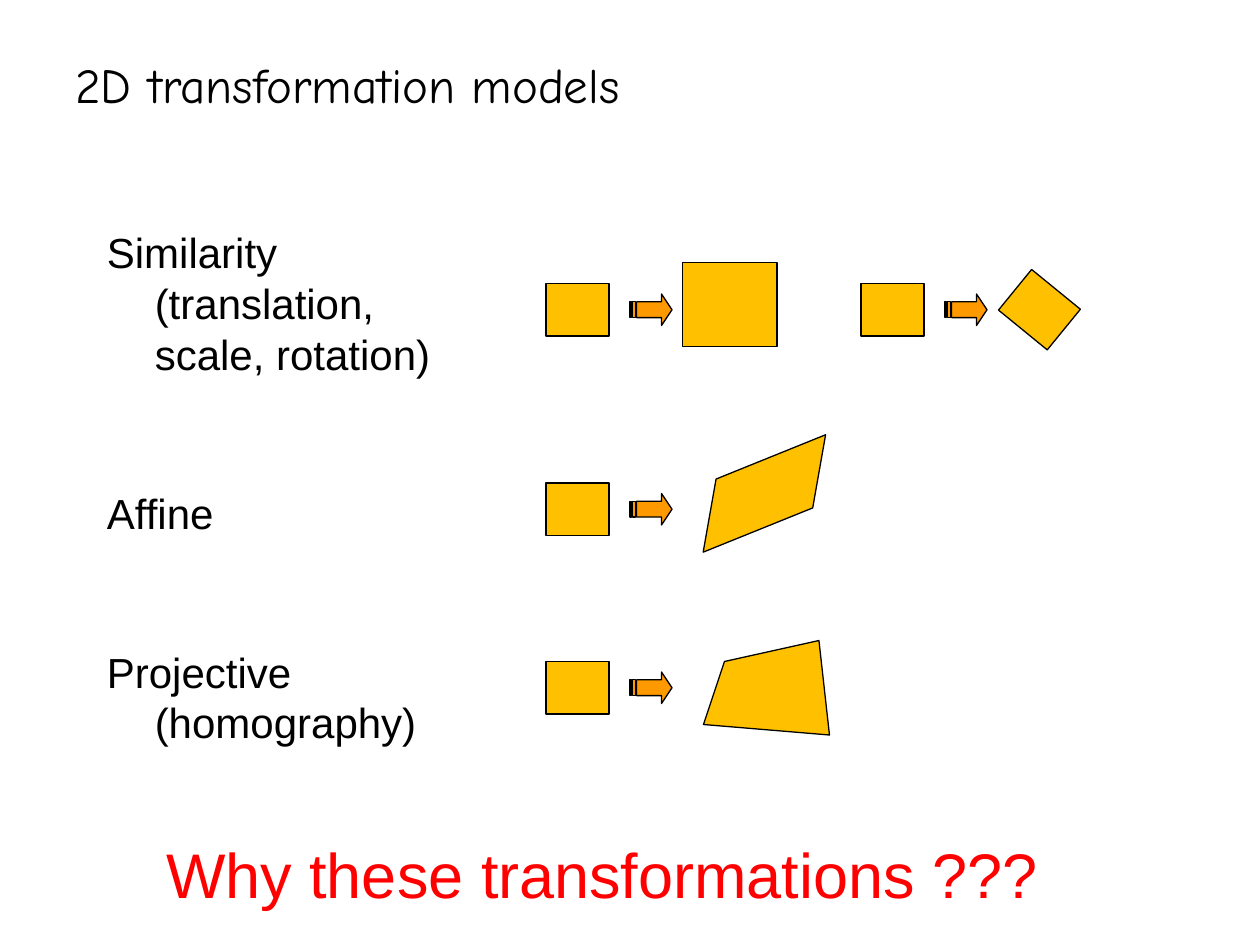
"""Build a slide that compares similarity, affine and projective transformations."""
import pptx
import pptx.dml.color
import pptx.enum.shapes
import pptx.enum.text
import pptx.util

presentation = pptx.Presentation()
presentation.slide_width = pptx.util.Inches(10)
presentation.slide_height = pptx.util.Inches(7.5)
slide = presentation.slides.add_slide(presentation.slide_layouts[6])
shapes = slide.shapes
kinds = pptx.enum.shapes.MSO_SHAPE
cell = presentation.slide_width // 120


def color(value):
    return pptx.dml.color.RGBColor.from_string(value)


def paint(shape, fill):
    shape.shadow.inherit = False
    shape.fill.solid()
    shape.fill.fore_color.rgb = color(fill)
    shape.line.color.rgb = color("000000")
    shape.line.width = pptx.util.Pt(0.75)


texts = [
    ((6, 2, 108, 12), ["2D transformation models"], "Comic Neue", 28, "000000"),
    ((9, 21, 105, 69), ["Similarity\v(translation,\vscale, rotation)", "Affine",
                        "Projective\v(homography)"], "Arial", 24, "000000"),
    ((14.64, 79, 86.3, 8.5), ["Why these transformations ???"], "Arial", 36, "FF0000"),
]
frames = []
for box, lines, font, size, ink in texts:
    frame = shapes.add_textbox(*(int(cell * number) for number in box)).text_frame
    frame.word_wrap = True
    frame.text = "\n".join(lines)
    for paragraph in frame.paragraphs:
        paragraph.font.name = font
        paragraph.font.size = pptx.util.Pt(size)
        paragraph.font.color.rgb = color(ink)
    frames.append(frame)

title, models, question = frames
title.vertical_anchor = pptx.enum.text.MSO_ANCHOR.MIDDLE
question.word_wrap = False
question.auto_size = pptx.enum.text.MSO_AUTO_SIZE.SHAPE_TO_FIT_TEXT
indent = pptx.util.Inches(0.38)
for number, paragraph in enumerate(models.paragraphs):
    paragraph.line_spacing = pptx.util.Pt(28.9)
    paragraph.space_before = pptx.util.Pt(62 if number else 0)
    properties = paragraph._p.get_or_add_pPr()
    properties.set("marL", str(indent))
    properties.set("indent", str(-indent))

arrow_head = [(24, 0), (24, 4), (5, 4), (5, 12), (24, 12), (24, 16), (32, 8)]
arrow_stripes = [[(left, 4), (left, 12), (right, 12), (right, 4)]
                 for left, right in ((2, 4), (0, 1))]
for column, row in ((52, 27), (82, 27), (52, 46), (52, 63)):
    square = shapes.add_shape(kinds.RECTANGLE, column * cell, row * cell, 6 * cell, 5 * cell)
    paint(square, "FFC000")
    builder = shapes.build_freeform(*arrow_head[0], scale=(cell / 8, cell * 3 / 16))
    builder.add_line_segments(arrow_head[1:])
    for stripe in arrow_stripes:
        builder.move_to(*stripe[0])
        builder.add_line_segments(stripe[1:])
    arrow = builder.convert_to_shape((column + 8) * cell, (row + 1) * cell)
    paint(arrow, "FF9900")

results = [
    (kinds.RECTANGLE, (65, 25, 9, 8), 0),
    (kinds.RECTANGLE, (96, 27, 6, 5), 39.2),
    (kinds.PARALLELOGRAM, (65.3, 44, 15, 6), 338),
]
for kind, box, angle in results:
    result = shapes.add_shape(kind, *(int(cell * number) for number in box))
    result.rotation = angle
    if kind == kinds.PARALLELOGRAM:
        result.adjustments[0] = 0.625
    paint(result, "FFC000")

builder = shapes.build_freeform(67, 69, scale=cell)
builder.add_line_segments([(69, 63), (78, 61), (79, 70)])
paint(builder.convert_to_shape(), "FFC000")

presentation.save("out.pptx")
